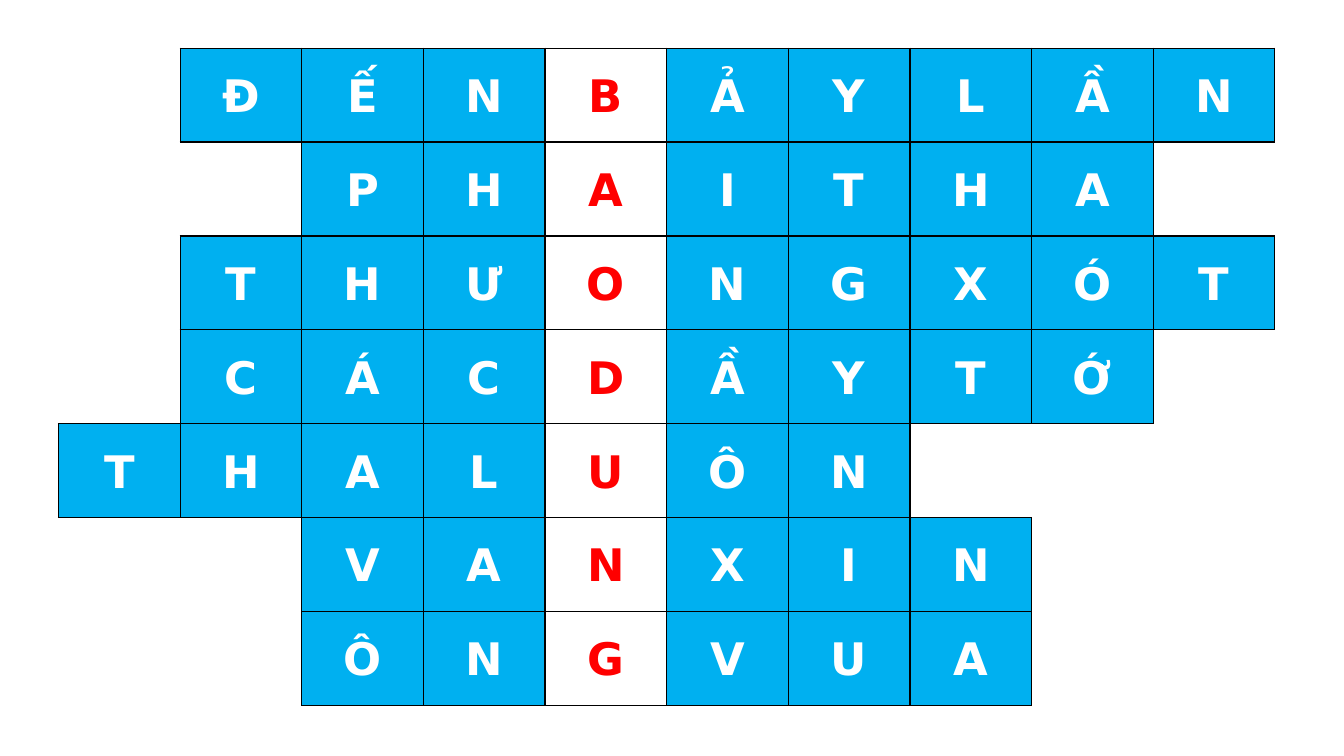
from itertools import product

from lxml import etree
from pptx import Presentation
from pptx.dml.color import RGBColor
from pptx.enum import text
from pptx.oxml.ns import qn
from pptx.util import Pt

# Each answer with the index of its letter in the key column
ANSWERS = [
    ("ĐẾNBẢYLẦN", 3),
    ("PHAITHA", 2),
    ("THƯONGXÓT", 3),
    ("CÁCDẦYTỚ", 3),
    ("THALUÔN", 4),
    ("VANXIN", 2),
    ("ÔNGVUA", 2),
]
COLS, KEY = 10, 4
LEFT, TOP, WIDE, HIGH = 41.8, 34.4, 86.9, 67.07
SIDES = {"L": (0, -1), "R": (0, 1), "T": (-1, 0), "B": (1, 0)}
THEME = {
    "font": "DejaVu Sans",
    "size": 32,
    "tile": "00B0F0",
    "letter": "FFFFFF",
    "key_tile": "FFFFFF",
    "key_letter": "FF0000",
    "line": "000000",
    "line_width": 1,
}


def write(cell, words, color, size=THEME["size"], bold=True):
    cell.vertical_anchor = text.MSO_ANCHOR.MIDDLE
    cell.margin_left = cell.margin_right = Pt(5)
    cell.margin_top = cell.margin_bottom = 0
    para = cell.text_frame.paragraphs[0]
    para.alignment = text.PP_ALIGN.CENTER
    para.line_spacing = 1.07
    run = para.add_run()
    run.text = words
    run.font.name = THEME["font"]
    run.font.size = Pt(size)
    run.font.bold = bold
    run.font.color.rgb = RGBColor.from_string(color)


def edge(cell, side, drawn):
    """Draw one border of a cell, or clear it."""
    props = cell._tc.get_or_add_tcPr()
    line = etree.SubElement(props, qn(f"a:ln{side}"))
    if drawn:
        line.set("w", str(Pt(THEME["line_width"])))
        fill = etree.SubElement(line, qn("a:solidFill"))
        etree.SubElement(fill, qn("a:srgbClr"), val=THEME["line"])
    else:
        etree.SubElement(line, qn("a:noFill"))


def main():
    deck = Presentation()
    deck.slide_width, deck.slide_height = Pt(960), Pt(540)
    slide = deck.slides.add_slide(deck.slide_layouts[6])

    letters = {
        (row, KEY - key + i): letter
        for row, (word, key) in enumerate(ANSWERS)
        for i, letter in enumerate(word)
    }
    rows = len(ANSWERS)
    grid = slide.shapes.add_table(
        rows, COLS, Pt(LEFT), Pt(TOP), Pt(WIDE * COLS), Pt(HIGH * rows)
    ).table
    grid.first_row = grid.horz_banding = False
    for col in grid.columns:
        col.width = Pt(WIDE)
    for row in grid.rows:
        row.height = Pt(HIGH)

    for row, col in product(range(rows), range(COLS)):
        cell = grid.cell(row, col)
        letter = letters.get((row, col))
        for side, (down, right) in SIDES.items():
            edge(cell, side, letter or (row + down, col + right) in letters)
        if not letter:
            cell.fill.background()
            continue
        kind = "key_" if col == KEY else ""
        cell.fill.solid()
        cell.fill.fore_color.rgb = RGBColor.from_string(THEME[kind + "tile"])
        write(cell, letter, THEME[kind + "letter"])

    deck.save("out.pptx")


if __name__ == "__main__":
    main()
